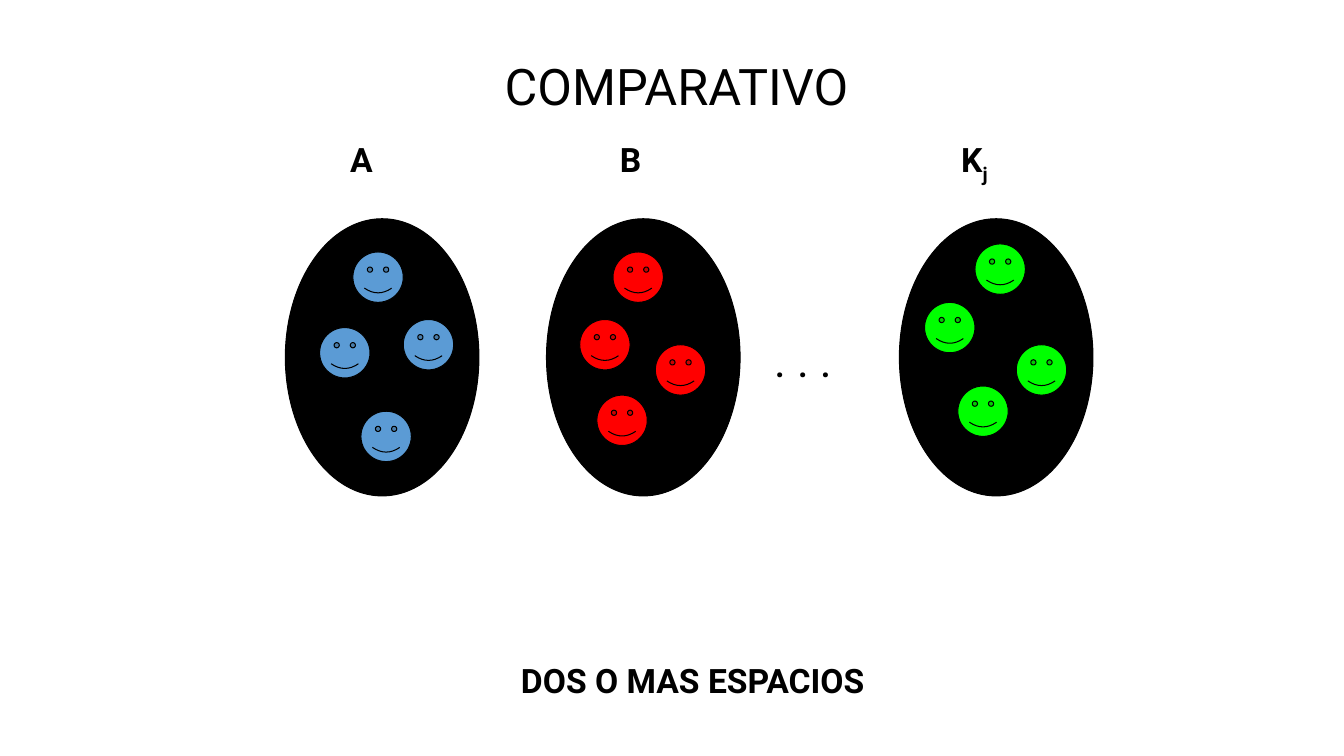
from pptx import Presentation
from pptx.dml.color import RGBColor
from pptx.enum.shapes import MSO_SHAPE
from pptx.enum.text import MSO_AUTO_SIZE, PP_ALIGN
from pptx.util import Inches, Pt

BLACK = RGBColor(0x00, 0x00, 0x00)
BLUE = RGBColor(0x5B, 0x9B, 0xD5)
RED = RGBColor(0xFF, 0x00, 0x00)
GREEN = RGBColor(0x00, 0xFF, 0x00)
FACE_SIZE = 0.5

presentation = Presentation()
presentation.slide_width = Inches(13.33)
presentation.slide_height = Inches(7.5)
slide = presentation.slides.add_slide(presentation.slide_layouts[6])


def add_label(left, top, width, height, text, size, bold=True,
              alignment=PP_ALIGN.CENTER, subscript=""):
    box = slide.shapes.add_textbox(Inches(left), Inches(top), Inches(width), Inches(height))
    frame = box.text_frame
    frame.word_wrap = True
    frame.auto_size = MSO_AUTO_SIZE.SHAPE_TO_FIT_TEXT
    paragraph = frame.paragraphs[0]
    paragraph.alignment = alignment
    for content, baseline in ((text, 0), (subscript, -25000)):
        if not content:
            continue
        run = paragraph.add_run()
        run.text = content
        run.font.name = "Roboto"
        run.font.size = Pt(size)
        run.font.bold = bold
        run.font.color.rgb = BLACK
        if baseline:
            run.font._element.set("baseline", str(baseline))


def add_figure(kind, left, top, width, height, color):
    shape = slide.shapes.add_shape(kind, Inches(left), Inches(top), Inches(width), Inches(height))
    shape.shadow.inherit = False
    shape.fill.solid()
    shape.fill.fore_color.rgb = color
    shape.line.color.rgb = BLACK
    shape.line.width = Pt(0.75)


add_label(2.92, 0.5, 7.58, 0.7, "COMPARATIVO", 36, bold=False)

groups = [
    ("A", "", 3.25, 2.83, BLUE, [(4, 3.17), (3.17, 3.25), (3.5, 2.5), (3.58, 4.08)]),
    ("B", "", 5.92, 5.42, RED, [(6.08, 2.5), (5.75, 3.17), (6.5, 3.42), (5.92, 3.92)]),
    ("K", "j", 9.33, 8.92, GREEN, [(9.67, 2.42), (9.17, 3), (10.08, 3.42), (9.5, 3.83)]),
]
for letter, subscript, label_left, oval_left, color, faces in groups:
    add_label(label_left, 1.33, 0.67, 0.5, letter, 24, subscript=subscript)
    add_figure(MSO_SHAPE.OVAL, oval_left, 2.17, 1.92, 2.75, BLACK)
    for face_left, face_top in faces:
        add_figure(MSO_SHAPE.SMILEY_FACE, face_left, face_top, FACE_SIZE, FACE_SIZE, color)

add_label(7.58, 3.25, 1.25, 0.63, ". . .", 32, bold=False, alignment=PP_ALIGN.LEFT)
add_label(4.08, 6.5, 5.58, 0.5, "DOS O MAS ESPACIOS", 24)

presentation.save("out.pptx")
